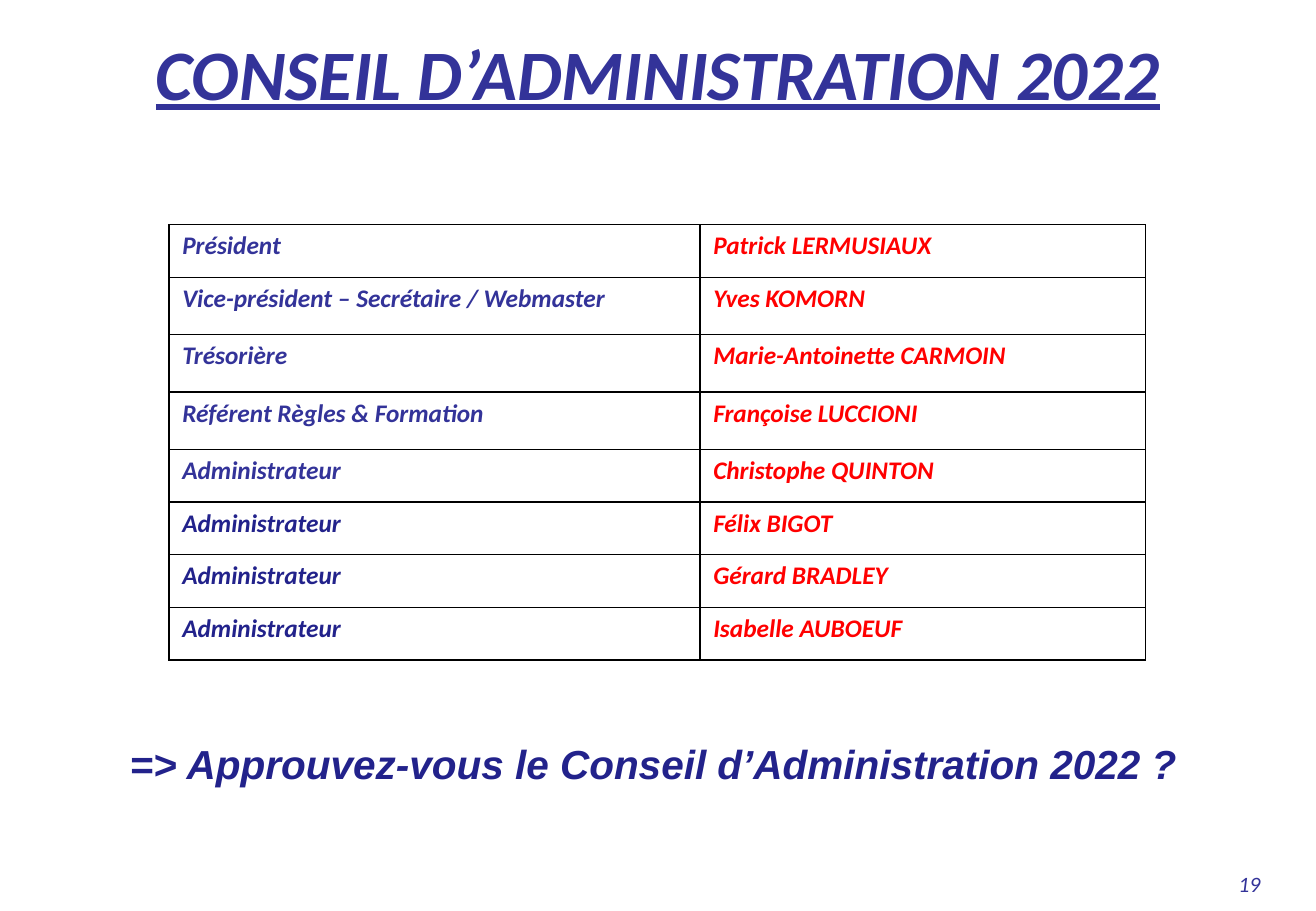
from lxml import etree
from pptx import Presentation
from pptx.dml.color import RGBColor
from pptx.enum.text import MSO_ANCHOR, PP_ALIGN
from pptx.oxml import parse_xml
from pptx.oxml.ns import nsdecls
from pptx.util import Cm, Pt

BLUE, NAVY, RED = "333399", "22228B", "FF0000"
BOARD = [
    ("Président", "Patrick LERMUSIAUX", BLUE, 1.1),
    ("Vice-président – Secrétaire / Webmaster", "Yves KOMORN", BLUE, 1.2),
    ("Trésorière", "Marie-Antoinette CARMOIN", BLUE, 1.2),
    ("Référent Règles & Formation", "Françoise LUCCIONI", BLUE, 1.2),
    ("Administrateur", "Christophe QUINTON", BLUE, 1.1),
    ("Administrateur", "Félix BIGOT", NAVY, 1.1),
    ("Administrateur", "Gérard BRADLEY", NAVY, 1.1),
    ("Administrateur", "Isabelle AUBOEUF", NAVY, 1.1),
]


def write(tf, text, size, color, font="Calibri", bold=True, underline=False,
          align=PP_ALIGN.LEFT):
    tf.word_wrap = True
    tf.vertical_anchor = MSO_ANCHOR.TOP
    p = tf.paragraphs[0]
    p.alignment = align
    r = p.add_run()
    r.text = text
    r.font.name, r.font.size = font, Pt(size)
    r.font.bold, r.font.italic, r.font.underline = bold, True, underline
    r.font.color.rgb = RGBColor.from_string(color)


def add_borders(cell):
    """Draw a 1 pt black line on all four sides of a table cell."""
    tc_pr = cell._tc.get_or_add_tcPr()
    for i, side in enumerate(("lnL", "lnR", "lnT", "lnB")):
        tc_pr.insert(i, parse_xml(
            f'<a:{side} {nsdecls("a")} w="12700"><a:solidFill>'
            f'<a:srgbClr val="000000"/></a:solidFill></a:{side}>'))


prs = Presentation()
prs.slide_width, prs.slide_height = Cm(27.51), Cm(19.05)
s = prs.slides.add_slide(prs.slide_layouts[5])

title = s.shapes.title
title.left, title.top, title.width, title.height = Cm(2.06), Cm(0.41), Cm(23.39), Cm(2.69)
title.text_frame.margin_top = Cm(0.2)
write(title.text_frame, "CONSEIL D’ADMINISTRATION 2022", 42, BLUE,
      underline=True, align=PP_ALIGN.CENTER)

frame = s.shapes.add_table(len(BOARD), 2, Cm(3.53), Cm(4.7), Cm(20.42), Cm(9.1))
table = frame.table
table.first_row = table.horz_banding = False
table.columns[0].width, table.columns[1].width = Cm(11.1), Cm(9.32)
for row, (role, name, role_color, height) in zip(table.rows, BOARD):
    row.height = Cm(height)
    for cell, text, color in zip(row.cells, (role, name), (role_color, RED)):
        cell.fill.background()
        cell.margin_left = cell.margin_right = Cm(0.28)
        cell.vertical_anchor = MSO_ANCHOR.TOP
        write(cell.text_frame, text, 15, color)
        add_borders(cell)

question = s.shapes.add_textbox(Cm(2.46), Cm(15.32), Cm(23.9), Cm(1.27))
write(question.text_frame, "=> Approuvez-vous le Conseil d’Administration 2022 ?",
      24, NAVY, font="Arial")

number = s.shapes.add_textbox(Cm(20.96), Cm(18.08), Cm(5.64), Cm(0.91))
write(number.text_frame, "19", 13, BLUE, bold=False, align=PP_ALIGN.RIGHT)

prs.save("out.pptx")
